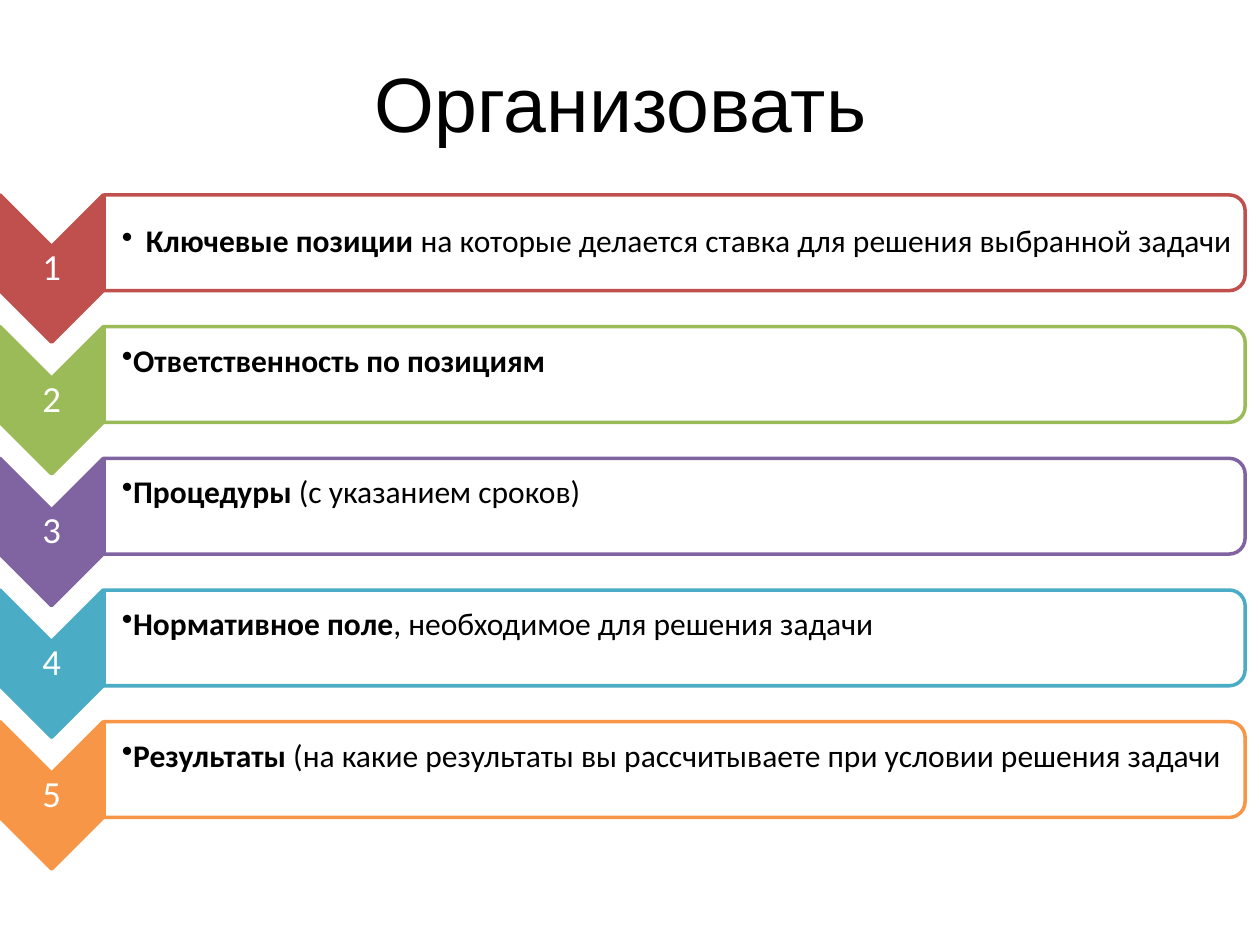
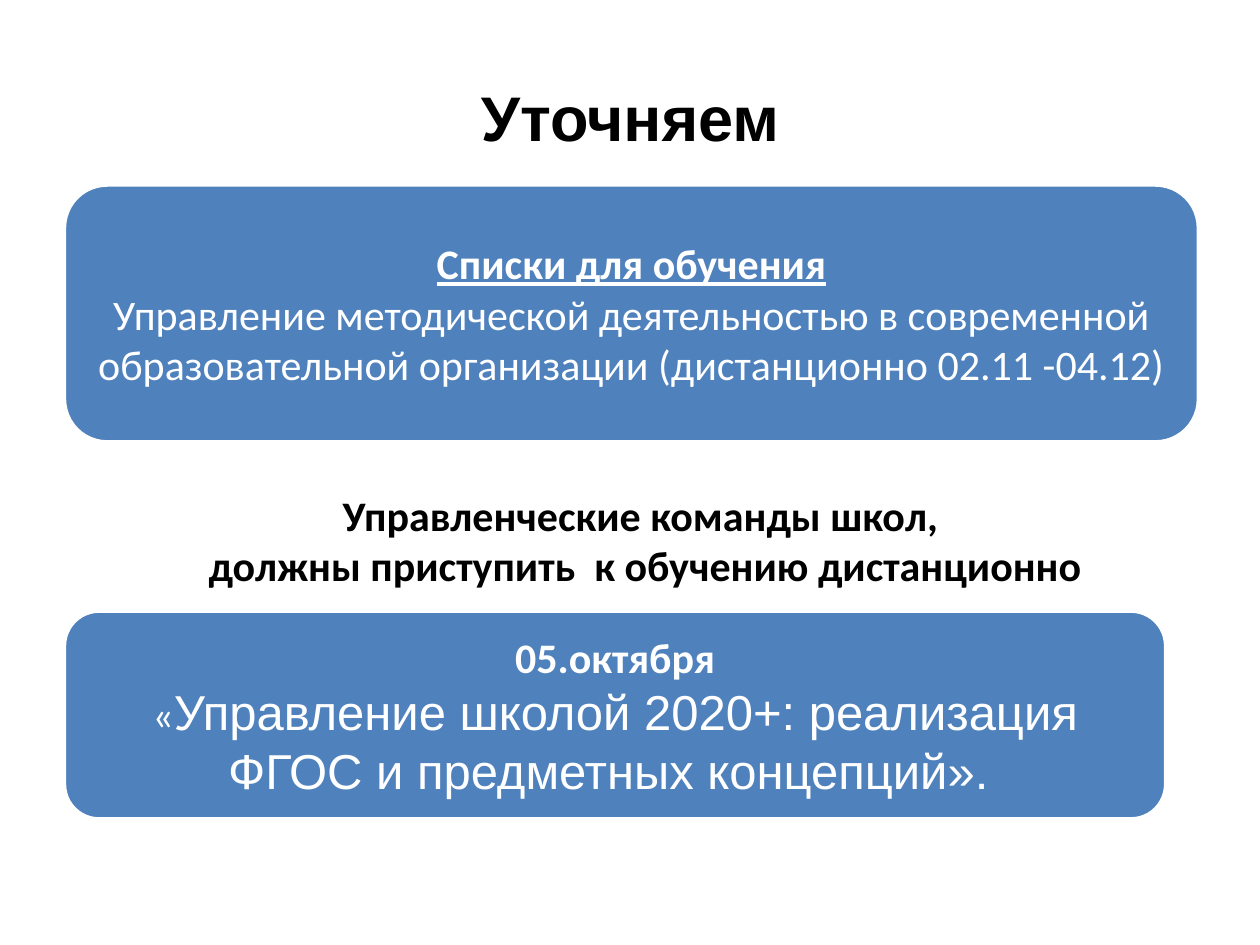
"""Build two slides: numbered steps to organise, and training details to confirm."""
from lxml.etree import SubElement
from pptx import Presentation
from pptx.dml.color import RGBColor
from pptx.enum.shapes import MSO_SHAPE
from pptx.enum.text import MSO_ANCHOR, PP_ALIGN
from pptx.oxml.ns import qn
from pptx.util import Cm, Pt

HUES = {"red": "C0504D", "green": "9BBB59", "purple": "8064A2", "teal": "4BACC6",
        "orange": "F79646", "blue": "4F81BD", "white": "FFFFFF", "black": "000000"}
STEPS = [
    ("red", "Ключевые позиции ", "на которые делается ставка для решения выбранной задачи"),
    ("green", "Ответственность по позициям", ""),
    ("purple", "Процедуры", " (с указанием сроков)"),
    ("teal", "Нормативное поле", ", необходимое для решения задачи"),
    ("orange", "Результаты", " (на какие результаты вы рассчитываете при условии решения задачи"),
]
TOP, PITCH = 3.93, 2.655


def hue(name):
    return RGBColor.from_string(HUES[name])


def write(frame, paras, size=24, tint="black", face="Calibri", align=PP_ALIGN.CENTER,
          anchor=MSO_ANCHOR.MIDDLE, inset=(0.25, 0.13, 0.25, 0.13), space=1.0):
    frame.word_wrap = True
    frame.vertical_anchor = anchor
    (frame.margin_left, frame.margin_top,
     frame.margin_right, frame.margin_bottom) = [Cm(gap) for gap in inset]
    for i, runs in enumerate(paras):
        para = frame.add_paragraph() if i else frame.paragraphs[0]
        para.alignment, para.line_spacing = align, space
        for words, style in runs:
            run = para.add_run()
            run.text = words
            font = run.font
            font.name = style.get("face", face)
            font.size = Pt(style.get("size", size))
            font.bold = style.get("bold", False)
            font.underline = style.get("under", False)
            font.color.rgb = hue(tint)


def add_title(slide, words, place, size, bold=False):
    title = slide.shapes.title
    title.left, title.top, title.width, title.height = [Cm(n) for n in place]
    write(title.text_frame, [[(words, {"bold": bold})]], size=size, face="Arial")


def add_text(slide, place, paras, **style):
    box = slide.shapes.add_textbox(*[Cm(n) for n in place])
    write(box.text_frame, paras, **style)
    return box


def add_shape(slide, kind, place, fill, line):
    shape = slide.shapes.add_shape(kind, *[Cm(n) for n in place])
    shape.shadow.inherit = False
    shape.fill.solid()
    shape.fill.fore_color.rgb = hue(fill)
    shape.line.color.rgb = hue(line)
    shape.line.width = Pt(2)
    return shape


def add_turned(slide, kind, place, fill, line):
    left, top, width, height = place
    shift = (width - height) / 2
    shape = add_shape(slide, kind, (left + shift, top - shift, height, width), fill, line)
    shape.rotation = 90
    return shape


def add_bullet(para, hang):
    props = para._p.get_or_add_pPr()
    props.set("marL", str(Cm(hang)))
    props.set("indent", str(-Cm(hang)))
    SubElement(props, qn("a:buChar"), char="•")


def add_step(slide, index, tint, lead, rest):
    top = TOP + index * PITCH
    add_turned(slide, MSO_SHAPE.CHEVRON, (0, top, 2.08, 2.97), tint, tint)
    add_text(slide, (0, top + 1.04, 2.08, 0.89), [[(str(index + 1), {})]],
             size=21, tint="white", inset=[0.03] * 4, space=0.9)
    bar = add_turned(slide, MSO_SHAPE.ROUND_2_SAME_RECTANGLE,
                     (2.1, top, 23, 1.93), "white", tint)
    shade = bar.fill._xPr.find(".//" + qn("a:srgbClr"))
    SubElement(shade, qn("a:alpha"), val="90000")
    runs = [(lead, {"bold": True})] + ([(rest, {})] if rest else [])
    box = add_text(slide, (2.1, top + 0.09, 22.9, 1.75), [runs], size=18,
                   align=PP_ALIGN.LEFT, inset=(0.36, 0.03, 0.03, 0.63 if index else 0.03),
                   space=1.0 if index else 0.9)
    add_bullet(box.text_frame.paragraphs[0], 0 if index else 0.48)


def add_card(slide, place, paras):
    card = add_shape(slide, MSO_SHAPE.ROUNDED_RECTANGLE, place, "blue", "white")
    write(card.text_frame, paras, tint="white", inset=[0.25] * 4)


def main():
    deck = Presentation()
    deck.slide_width, deck.slide_height = Cm(25.4), Cm(19.05)
    layout = deck.slide_layouts[5]

    slide = deck.slides.add_slide(layout)
    add_title(slide, "Организовать ", (2.1, 0.74, 21.26, 2.6), 44)
    for index, step in enumerate(STEPS):
        add_step(slide, index, *step)

    slide = deck.slides.add_slide(layout)
    add_title(slide, "Уточняем", (1.27, 0.76, 22.86, 3.18), 36, bold=True)
    add_card(slide, (1.3, 3.73, 22.86, 5.18), [
        [("Списки для обучения", {"bold": True, "under": True})],
        [("Управление методической деятельностью в современной образовательной "
          "организации (дистанционно 02.11 -04.12)", {})]])
    add_card(slide, (1.3, 12.32, 22.2, 4.19), [
        [("05.октября", {"bold": True})],
        [("«", {}), ("Управление школой 2020+: реализация ФГОС и предметных концепций». ",
                     {"face": "Arial", "size": 28})]])
    add_text(slide, (2.31, 9.73, 21.2, 2.31), [
        [("Управленческие команды школ,", {"bold": True})],
        [(" должны приступить  к обучению дистанционно", {"bold": True})]],
        anchor=MSO_ANCHOR.TOP)
    deck.save("out.pptx")


if __name__ == "__main__":
    main()
